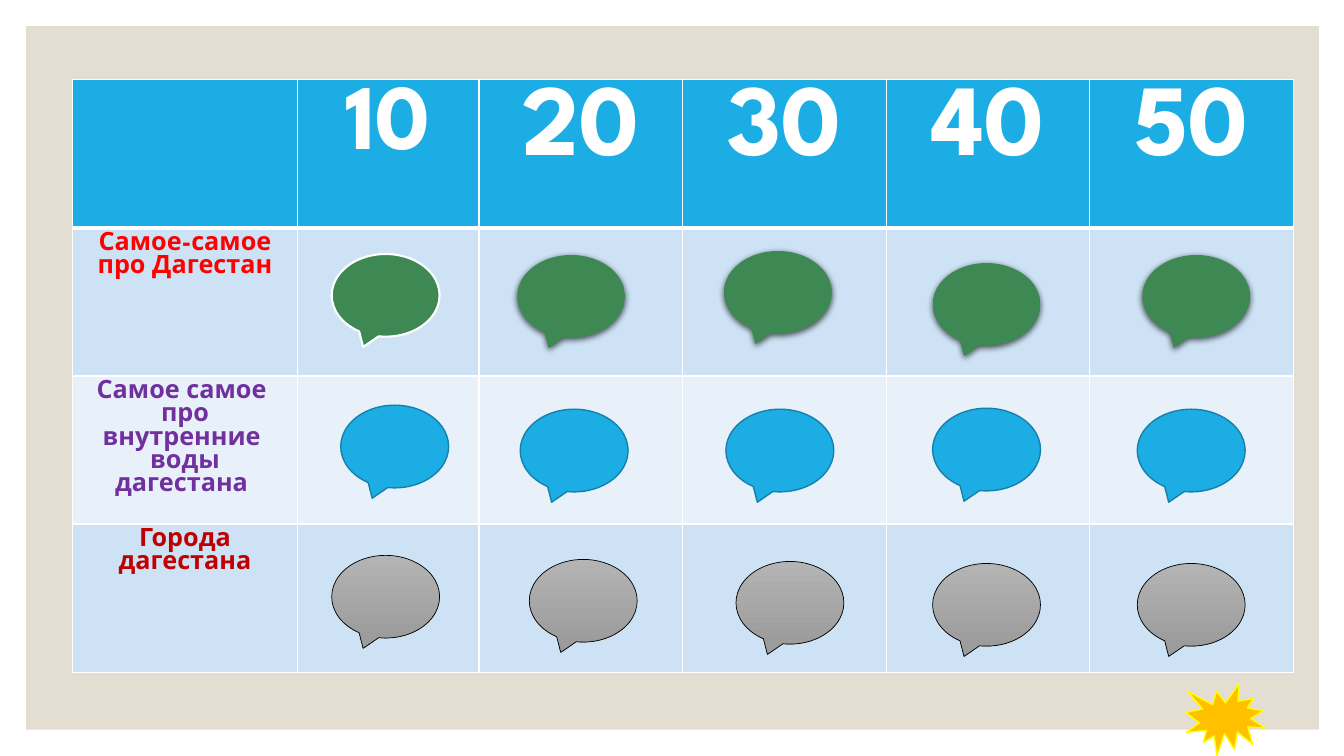
import pptx
import pptx.util
import pptx.dml.color
import pptx.enum.shapes
import pptx.enum.text
import pptx.oxml
import pptx.oxml.ns
from lxml import etree

Inches = pptx.util.Inches
Pt = pptx.util.Pt
SHAPES = pptx.enum.shapes.MSO_SHAPE

COLORS = {
    "panel": "E3DED1", "white": "FFFFFF", "black": "000000",
    "blue": "1CADE4", "blue_edge": "1580A9",
    "band_dark": "CDE3F5", "band_light": "E8F1FA",
    "red": "FF0000", "purple": "7030A0", "dark_red": "C00000",
    "green": "3E8853", "green_end": "3C8951",
    "gray": "B4B4B4", "gray_end": "9C9C9C",
    "gold": "FFC000", "yellow": "FFFF00",
}
FONT = "League Spartan"
POINTS = [("10", 66), ("20", 72), ("30", 72), ("40", 72), ("50", 72)]
TOPICS = [
    (["Самое-самое", "про Дагестан"], "red", "band_dark"),
    (["Самое самое ", "про внутренние ", "воды дагестана "], "purple", "band_light"),
    (["Города дагестана"], "dark_red", "band_dark"),
]
TABLE_BOX = (0.72, 0.79, 12.1, 5.88)
COLUMN_WIDTHS = [2.23, 1.8, 2.02, 2.02, 2.02, 2.02]
ROW_HEIGHT = 1.47
CALLOUT_SIZE = (1.07, 0.82)

# Fill colours, outline (colour, width) or None, shadow flag
STYLES = {
    "green_flat": (["green"], ("white", 1.5), False),
    "green": (["green", "green_end"], None, True),
    "blue": (["blue"], ("blue_edge", 1), False),
    "gray": (["gray", "gray_end"], ("black", 0.5), False),
    "panel": (["panel"], None, False),
    "star": (["gold"], ("yellow", 1), False),
}
CALLOUTS = {
    "green_flat": [(3.29, 2.52)],
    "green": [(5.13, 2.53), (7.18, 2.49), (9.25, 2.61), (11.33, 2.53)],
    "blue": [(3.38, 4.02), (5.16, 4.06), (7.2, 4.06), (9.25, 4.05), (11.28, 4.06)],
    "gray": [(3.29, 5.51), (5.25, 5.55), (7.3, 5.57), (9.25, 5.59), (11.28, 5.59)],
}


def rgb(name):
    return pptx.dml.color.RGBColor.from_string(COLORS[name])


def add_shadow(shape):
    effects = shape._element.spPr.find(pptx.oxml.ns.qn("a:effectLst"))
    effects.append(pptx.oxml.parse_xml(
        f'<a:outerShdw {pptx.oxml.ns.nsdecls("a")} blurRad="{Pt(4.5)}" dist="{Pt(1.5)}" '
        f'dir="5400000" algn="ctr" rotWithShape="0"><a:srgbClr val="{COLORS["black"]}">'
        '<a:alpha val="63000"/></a:srgbClr></a:outerShdw>'))


def add_styled(slide, kind, box, style):
    fills, outline, shadow = STYLES[style]
    shape = slide.shapes.add_shape(kind, *map(Inches, box))
    shape.shadow.inherit = False
    if len(fills) == 1:
        shape.fill.solid()
        shape.fill.fore_color.rgb = rgb(fills[0])
    else:
        shape.fill.gradient()
        shape.fill.gradient_angle = 270
        for stop, name in zip(shape.fill.gradient_stops, fills):
            stop.color.rgb = rgb(name)
    if outline:
        shape.line.color.rgb = rgb(outline[0])
        shape.line.width = Pt(outline[1])
    else:
        shape.line.fill.background()
    if shadow:
        add_shadow(shape)


def style_cell(cell, fill, top=1, bottom=1):
    """Give the cell white borders (widths in points) and a solid fill."""
    properties = cell._tc.get_or_add_tcPr()
    for side, width in (("L", 1), ("R", 1), ("T", top), ("B", bottom)):
        line = etree.SubElement(properties, pptx.oxml.ns.qn(f"a:ln{side}"), w=str(Pt(width)))
        paint = etree.SubElement(line, pptx.oxml.ns.qn("a:solidFill"))
        etree.SubElement(paint, pptx.oxml.ns.qn("a:srgbClr"), val=COLORS["white"])
    cell.fill.solid()
    cell.fill.fore_color.rgb = rgb(fill)


def write_cell(cell, lines, size, color):
    for index, line in enumerate(lines):
        frame = cell.text_frame
        para = frame.add_paragraph() if index else frame.paragraphs[0]
        para.alignment = pptx.enum.text.PP_ALIGN.CENTER
        span = para.add_run()
        span.text = line
        span.font.name = FONT
        span.font.size = Pt(size)
        span.font.bold = True
        span.font.color.rgb = rgb(color)


def add_board(slide):
    table = slide.shapes.add_table(
        len(TOPICS) + 1, len(COLUMN_WIDTHS), *map(Inches, TABLE_BOX)).table
    for column, width in zip(table.columns, COLUMN_WIDTHS):
        column.width = Inches(width)
    for row in table.rows:
        row.height = Inches(ROW_HEIGHT)
    for cell in table.rows[0].cells:
        style_cell(cell, "blue", bottom=3)
    for column, (points, size) in enumerate(POINTS, 1):
        write_cell(table.cell(0, column), [points], size, "white")
    for row, (lines, color, band) in enumerate(TOPICS, 1):
        for cell in table.rows[row].cells:
            style_cell(cell, band, top=3 if row == 1 else 1)
        write_cell(table.cell(row, 0), lines, 18, color)


def main():
    deck = pptx.Presentation()
    deck.slide_width, deck.slide_height = Inches(13.33), Inches(7.5)
    slide = deck.slides.add_slide(deck.slide_layouts[6])
    add_styled(slide, SHAPES.RECTANGLE, (0.26, 0.26, 12.82, 6.98), "panel")
    add_board(slide)
    for style, corners in CALLOUTS.items():
        for corner in corners:
            add_styled(slide, SHAPES.OVAL_CALLOUT, corner + CALLOUT_SIZE, style)
    add_styled(slide, SHAPES.EXPLOSION1, (11.76, 6.78, 0.79, 0.72), "star")
    deck.save("out.pptx")


if __name__ == "__main__":
    main()
